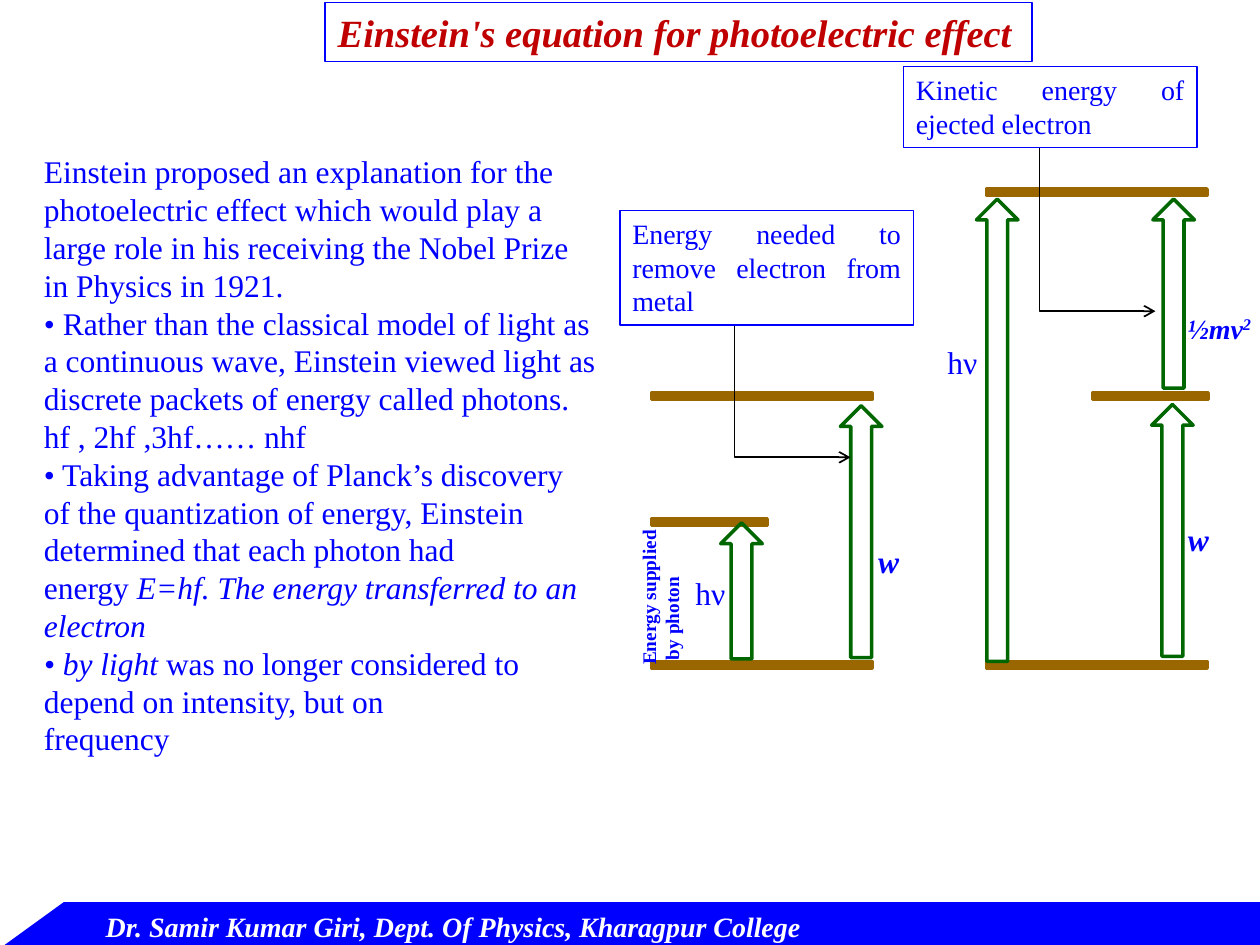
from lxml.etree import SubElement
from pptx import Presentation
from pptx.dml.color import RGBColor
from pptx.enum.shapes import MSO_CONNECTOR, MSO_SHAPE
from pptx.enum.text import MSO_ANCHOR, MSO_AUTO_SIZE, PP_ALIGN
from pptx.oxml.ns import qn
from pptx.util import Inches, Pt

COLORS = {
    "blue": "0000FF",
    "red": "C00000",
    "level": "996600",
    "arrow": "006600",
    "white": "FFFFFF",
    "black": "000000",
}
BODY = [
    ["Einstein proposed an explanation for the photoelectric effect which would "
     "play a large role in his receiving the Nobel Prize"],
    ["in Physics in 1921."],
    ["• Rather than the classical model of light as a continuous wave, Einstein "
     "viewed light as discrete packets of energy called photons. "
     "hf , 2hf ,3hf…… nhf"],
    ["• Taking advantage of Planck’s discovery of the quantization of energy, "
     "Einstein determined that each photon had"],
    ["energy ", ("E=hf. The energy transferred to an electron", {"italic": True})],
    [("• by light ", {"italic": True}),
     "was no longer considered to depend on intensity, but on"],
    ["frequency"],
]
BOLD = {"bold": True}
BOLD_ITALIC = {"bold": True, "italic": True}
LEVEL_HEIGHT = 0.05
ARROW_WIDTH = 0.33


def color(name):
    return RGBColor.from_string(COLORS[name])


def lengths(*values):
    return [Inches(value) for value in values]


def style_box(box, fill, line, width):
    if fill:
        box.fill.solid()
        box.fill.fore_color.rgb = color(fill)
    else:
        box.fill.background()
    box.line.color.rgb = color(line)
    box.line.width = Pt(width)


def add_box(shapes, kind, at, fill, line, width=2):
    box = shapes.add_shape(kind, *lengths(*at))
    box.shadow.inherit = False
    style_box(box, fill, line, width)
    return box


def write(box, paragraphs, size, ink="blue", wrap=True, align=PP_ALIGN.LEFT, look=None):
    """Fill a box; a span is a string, or a pair of string and font values."""
    frame = box.text_frame
    frame.word_wrap = wrap
    frame.auto_size = MSO_AUTO_SIZE.NONE
    frame.vertical_anchor = MSO_ANCHOR.TOP
    for index, spans in enumerate(paragraphs):
        para = frame.add_paragraph() if index else frame.paragraphs[0]
        para.alignment = align
        for item in spans:
            text, extra = item if isinstance(item, tuple) else (item, {})
            span = para.add_run()
            span.text = text
            span.font.color.rgb = color(ink)
            values = {"name": "Times New Roman", "size": Pt(size),
                      "bold": False, "italic": False, **(look or {}), **extra}
            for name, value in values.items():
                setattr(span.font, name, value)


def add_text(shapes, at, paragraphs, size, **style):
    box = shapes.add_textbox(*lengths(*at))
    write(box, paragraphs, size, **style)
    return box


def add_title(page):
    title = page.shapes.title
    title.left, title.top, title.width, title.height = lengths(2.58, 0.02, 5.61, 0.47)
    style_box(title, None, "blue", 0.75)
    write(title, [["Einstein's equation for photoelectric effect"]], 22,
          ink="red", wrap=False, look=BOLD_ITALIC)


def add_level(shapes, left, top, width):
    add_box(shapes, MSO_SHAPE.RECTANGLE, (left, top, width, LEVEL_HEIGHT), "level", "level")


def add_energy_arrow(shapes, left, top, height):
    add_box(shapes, MSO_SHAPE.UP_ARROW, (left, top, ARROW_WIDTH, height), None, "arrow")


def add_pointer(shapes, left, top, across=0.92, down=1.8):
    """Draw a bent arrow that runs down and then right from (left, top)."""
    # The unturned frame shares its centre with the drawn one, sides swapped.
    x = left + (across - down) / 2
    y = top + (down - across) / 2
    pointer = shapes.add_connector(
        MSO_CONNECTOR.ELBOW, *lengths(x + down, y, x, y + across))
    pointer.line.color.rgb = color("black")
    pointer.line.width = Pt(1)
    properties = pointer._element.spPr
    properties.find(qn("a:xfrm")).set("rot", str(270 * 60000))
    properties.find(qn("a:prstGeom")).set("prst", "bentConnector2")
    SubElement(properties.find(qn("a:ln")), qn("a:tailEnd"), type="arrow")
    SubElement(properties, qn("a:effectLst"))


def add_callout(shapes, at, text):
    box = add_box(shapes, MSO_SHAPE.RECTANGLE, at, "white", "blue", 0.75)
    write(box, [[text]], 16, align=PP_ALIGN.JUSTIFY)


def add_kinetic_label(shapes):
    box = add_text(shapes, (9.33, 2.42, 0.73, 0.37), [["½mv", "2"]], 16,
                   wrap=False, look=BOLD_ITALIC)
    exponent = box.text_frame.paragraphs[0].runs[1]
    exponent.font._element.set("baseline", "30000")


def add_footer(page):
    shapes = page.shapes.add_group_shape().shapes
    add_box(shapes, MSO_SHAPE.RECTANGLE, (0, 7.17, 10, 0.33), "blue", "blue")
    corner = add_box(shapes, MSO_SHAPE.RIGHT_TRIANGLE, (0.09, 7, 0.42, 0.58), "white", "white")
    corner.rotation = 90
    add_text(shapes, (0.74, 7.17, 6.01, 0.37),
             [["Dr. Samir Kumar Giri, Dept. Of Physics, Kharagpur College"]], 16,
             ink="white", wrap=False, look=BOLD_ITALIC)


def main():
    deck = Presentation()
    deck.slide_width, deck.slide_height = lengths(10, 7.5)
    page = deck.slides.add_slide(deck.slide_layouts[5])
    shapes = page.shapes

    add_title(page)
    add_text(shapes, (0.25, 1.16, 4.58, 4.95), BODY, 18)

    for level in [(5.17, 5.25, 1.75), (5.17, 3.12, 1.75), (5.17, 4.12, 0.92),
                  (7.83, 5.25, 1.75), (7.83, 1.5, 1.75), (8.67, 3.12, 0.92)]:
        add_level(shapes, *level)
    for arrow in [(6.67, 3.22, 2), (5.72, 4.15, 1.08), (7.75, 1.58, 3.67),
                  (9.14, 3.21, 2), (9.15, 1.58, 1.5)]:
        add_energy_arrow(shapes, *arrow)
    for start in [(5.83, 1.83), (8.25, 0.67)]:
        add_pointer(shapes, *start)

    add_callout(shapes, (4.92, 1.67, 2.33, 0.91),
                "Energy needed to remove electron from metal")
    add_callout(shapes, (7.17, 0.53, 2.33, 0.64), "Kinetic energy of ejected electron")

    add_kinetic_label(shapes)
    for left, top in [(7.42, 2.67), (5.42, 4.51)]:
        add_text(shapes, (left, top, 0.46, 0.4), [["hν"]], 18, wrap=False)
    for left, top in [(9.33, 4.08), (6.87, 4.25)]:
        add_text(shapes, (left, top, 0.38, 0.4), [["w"]], 18, wrap=False, look=BOLD_ITALIC)
    supplied = add_text(shapes, (4.6, 4.5, 1.28, 0.47),
                        [["Energy supplied"], [" by photon"]], 11, wrap=False, look=BOLD)
    supplied.rotation = 270

    add_footer(page)
    deck.save("out.pptx")


if __name__ == "__main__":
    main()
